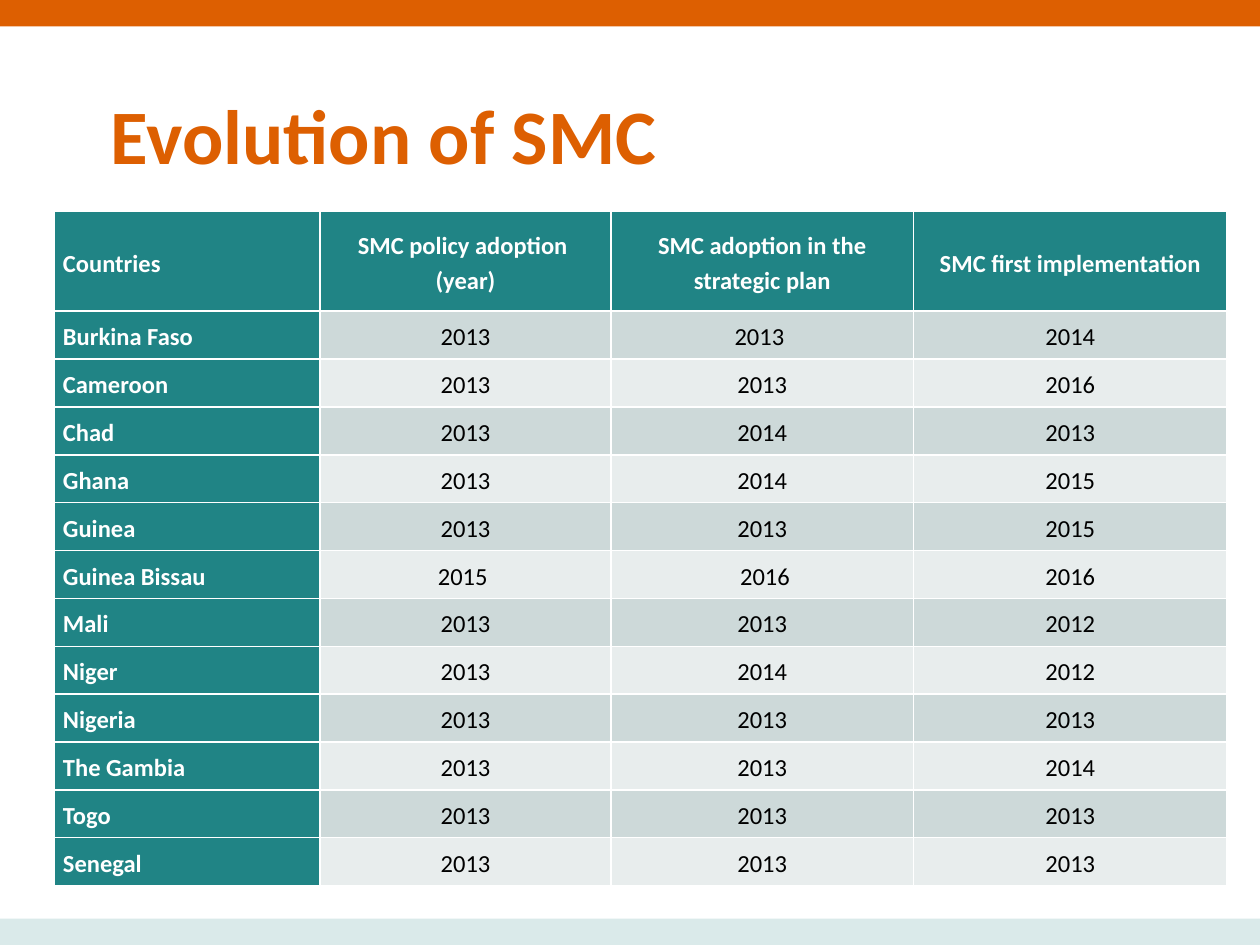
"""Build the slide on the evolution of SMC by country."""
from pptx import Presentation
from pptx.dml.color import RGBColor
from pptx.enum.shapes import MSO_SHAPE
from pptx.enum.text import MSO_ANCHOR, MSO_AUTO_SIZE, PP_ALIGN
from pptx.util import Inches, Pt

RECTANGLE = MSO_SHAPE.RECTANGLE
BOTTOM, MIDDLE = MSO_ANCHOR.BOTTOM, MSO_ANCHOR.MIDDLE
LEFT, CENTER = PP_ALIGN.LEFT, PP_ALIGN.CENTER
NO_AUTO_SIZE = MSO_AUTO_SIZE.NONE

ORANGE = RGBColor(0xDD, 0x5F, 0x01)
PALE_TEAL = RGBColor(0xDA, 0xEA, 0xEA)
TEAL = RGBColor(0x20, 0x84, 0x85)
BANDS = (RGBColor(0xCD, 0xD9, 0xD9), RGBColor(0xE8, 0xED, 0xED))
WHITE = RGBColor(0xFF, 0xFF, 0xFF)
BLACK = RGBColor(0x00, 0x00, 0x00)

TITLE = "Evolution of SMC"
ADOPTION = [
    ("Countries", "SMC policy adoption \n(year)",
     "SMC adoption in the strategic plan", "SMC first implementation"),
    ("Burkina Faso", "2013", "2013 ", "2014"),
    ("Cameroon", "2013", "2013", "2016"),
    ("Chad", "2013", "2014", "2013"),
    ("Ghana", "2013", "2014", "2015"),
    ("Guinea", "2013", "2013", "2015"),
    ("Guinea Bissau", "2015 ", " 2016", "2016"),
    ("Mali", "2013", "2013", "2012"),
    ("Niger", "2013", "2014", "2012"),
    ("Nigeria", "2013", "2013", "2013"),
    ("The Gambia", "2013", "2013", "2014"),
    ("Togo", "2013", "2013", "2013"),
    ("Senegal", "2013", "2013", "2013"),
]
COLUMN_WIDTHS = (2.11, 2.31, 2.4, 2.49)
HEADER_HEIGHT, ROW_HEIGHT = 0.79, 0.38
SLIDE_WIDTH, SLIDE_HEIGHT, BAR_HEIGHT = 10, 7.5, 0.21
BARS = ((0, ORANGE), (SLIDE_HEIGHT - BAR_HEIGHT, PALE_TEAL))

TITLE_PLACE = {"left": Inches(0.88), "top": Inches(0.49),
               "width": Inches(8.25), "height": Inches(0.95)}
TITLE_FRAME = {"margin_left": 0, "margin_top": 0, "margin_right": 0,
               "margin_bottom": 0, "vertical_anchor": BOTTOM,
               "word_wrap": True, "auto_size": NO_AUTO_SIZE}
CELL_FRAME = {"margin_left": Inches(0.07), "margin_top": 0,
              "margin_right": Inches(0.07), "margin_bottom": 0,
              "vertical_anchor": MIDDLE}


def apply(target, values):
    """Set each attribute named in values on the target."""
    for name, value in values.items():
        setattr(target, name, value)


def format_text(frame, size, color, bold, align, spacing):
    """Format every paragraph of a text frame alike."""
    for paragraph in frame.paragraphs:
        apply(paragraph, {"alignment": align, "line_spacing": spacing})
        for run in paragraph.runs:
            apply(run.font, {"name": "Calibri", "size": Pt(size), "bold": bold})
            run.font.color.rgb = color


def add_bars(slide):
    """Draw the bands along the top and bottom edges."""
    for top, color in BARS:
        bar = slide.shapes.add_shape(RECTANGLE, 0, Inches(top),
                                     Inches(SLIDE_WIDTH), Inches(BAR_HEIGHT))
        bar.shadow.inherit = False
        bar.fill.solid()
        bar.fill.fore_color.rgb = color
        bar.line.fill.background()


def add_title(slide):
    """Fill the title placeholder."""
    title = slide.shapes.title
    apply(title, TITLE_PLACE)
    title.text_frame.text = TITLE
    apply(title.text_frame, TITLE_FRAME)
    format_text(title.text_frame, 44, ORANGE, True, LEFT, 0.9)


def add_adoption_table(slide):
    """Add the table of countries and years."""
    height = HEADER_HEIGHT + ROW_HEIGHT * (len(ADOPTION) - 1)
    table = slide.shapes.add_table(
        len(ADOPTION), len(COLUMN_WIDTHS), Inches(0.43), Inches(1.68),
        Inches(sum(COLUMN_WIDTHS)), Inches(height)).table
    table.first_col = True
    for column, width in zip(table.columns, COLUMN_WIDTHS):
        column.width = Inches(width)
    for r, entries in enumerate(ADOPTION):
        table.rows[r].height = Inches(ROW_HEIGHT if r else HEADER_HEIGHT)
        for c, entry in enumerate(entries):
            heading = r == 0 or c == 0
            cell = table.cell(r, c)
            cell.text = entry
            apply(cell, CELL_FRAME)
            cell.fill.solid()
            cell.fill.fore_color.rgb = TEAL if heading else BANDS[(r - 1) % 2]
            format_text(cell.text_frame, 14, WHITE if heading else BLACK,
                        heading, CENTER if c else LEFT, 1.15)


def main():
    """Assemble and save the slide."""
    deck = Presentation()
    apply(deck, {"slide_width": Inches(SLIDE_WIDTH),
                 "slide_height": Inches(SLIDE_HEIGHT)})
    slide = deck.slides.add_slide(deck.slide_layouts.get_by_name("Title Only"))
    add_bars(slide)
    add_title(slide)
    add_adoption_table(slide)
    deck.save("out.pptx")


if __name__ == "__main__":
    main()
